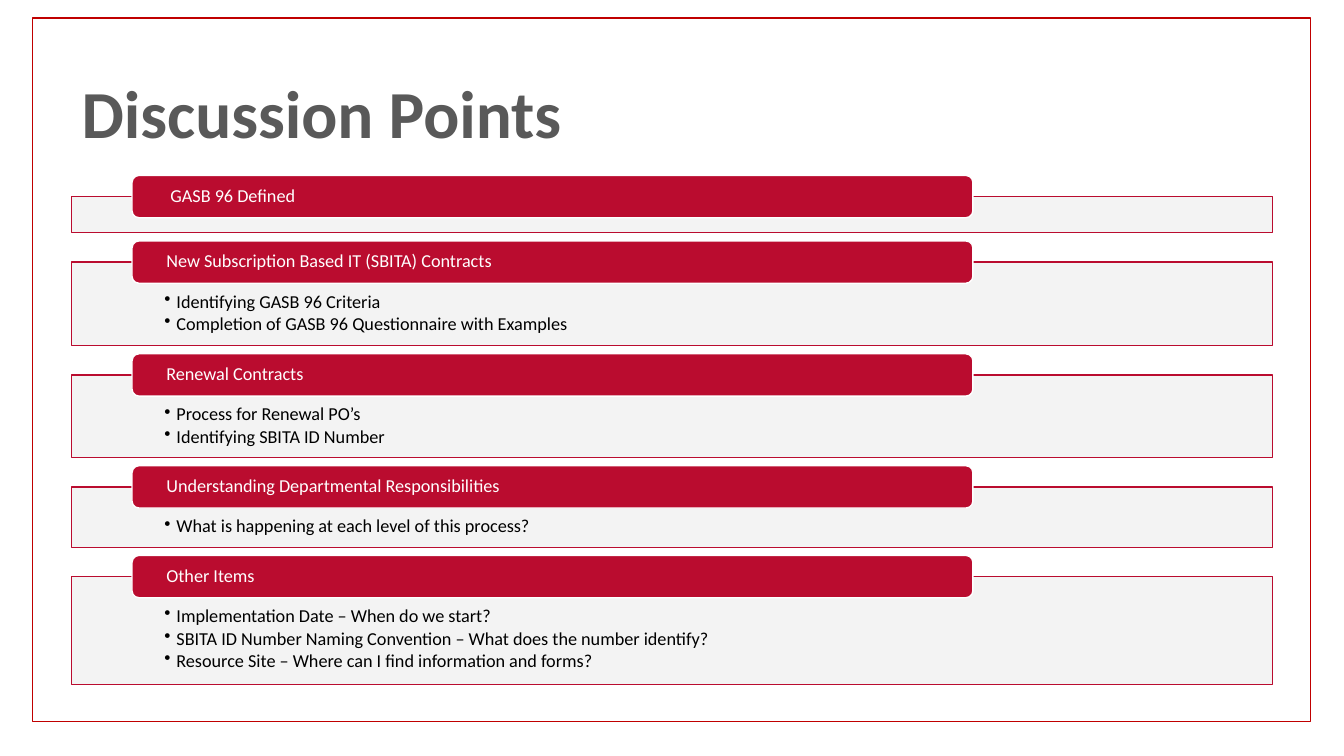
"""Build the Discussion Points slide: five headed panels inside a red frame."""
from lxml import etree
from pptx import Presentation, util as u
from pptx.dml.color import RGBColor
from pptx.enum import shapes, text
from pptx.oxml import ns

HUES = {"red": "BA0C2F", "frame": "C00000", "panel": "F2F2F2",
        "title": "595959", "white": "FFFFFF", "black": "000000"}
TOPICS = [
    (" GASB 96 Defined", 0.36, []),
    ("New Subscription Based IT (SBITA) Contracts", 0.83,
     ["Identifying GASB 96 Criteria",
      "Completion of GASB 96 Questionnaire with Examples"]),
    ("Renewal Contracts", 0.82,
     ["Process for Renewal PO’s", "Identifying SBITA ID Number"]),
    ("Understanding Departmental Responsibilities", 0.6,
     ["What is happening at each level of this process?"]),
    ("Other Items", 1.07,
     ["Implementation Date – When do we start?",
      "SBITA ID Number Naming Convention – What does the number identify?",
      "Resource Site – Where can I find information and forms?"]),
]
GAP = 0.29


def add_box(kind, box, fill, line):
    shape = slide.shapes.add_shape(kind, *map(u.Inches, box))
    shape.shadow.inherit = False
    if fill:
        shape.fill.solid()
        shape.fill.fore_color.rgb = RGBColor.from_string(HUES[fill])
    else:
        shape.fill.background()
    shape.line.color.rgb = RGBColor.from_string(HUES[line])
    shape.line.width = u.Pt(1)
    return shape


def set_text(shape, lines, size, hue, pads, anchor):
    frame = shape.text_frame
    frame.text = "\n".join(lines)
    frame.word_wrap = True
    frame.auto_size = text.MSO_AUTO_SIZE.NONE
    frame.vertical_anchor = anchor
    (frame.margin_left, frame.margin_top,
     frame.margin_right, frame.margin_bottom) = map(u.Inches, pads)
    for para in frame.paragraphs:
        para.alignment = text.PP_ALIGN.LEFT
        para.line_spacing = 0.9
        para.font.size = u.Pt(size)
        para.font.name = "Calibri"
        para.font.color.rgb = RGBColor.from_string(HUES[hue])
    return frame.paragraphs


deck = Presentation()
deck.slide_width, deck.slide_height = u.Inches(13.33), u.Inches(7.5)
slide = deck.slides.add_slide(deck.slide_layouts[5])

title = slide.shapes.title
title.left, title.top = u.Inches(0.71), u.Inches(0.93)
title.width, title.height = u.Inches(10.87), u.Inches(0.64)
head = set_text(title, ["Discussion Points"], 48, "title",
                (0.1, 0.05, 0.1, 0.05), text.MSO_ANCHOR.BOTTOM)
head[0].font.bold = True

rect = shapes.MSO_SHAPE.RECTANGLE
add_box(rect, (0.32, 0.18, 12.68, 6.98), None, "frame")

top = 1.95
for topic, height, points in TOPICS:
    panel = add_box(rect, (0.71, top, 11.91, height), "panel", "red")
    color = panel._element.spPr.find(".//" + ns.qn("a:srgbClr"))
    etree.SubElement(color, ns.qn("a:alpha"), val="90000")
    if points:
        for para in set_text(panel, points, 13, "black",
                             (0.92, 0.3, 0.92, 0.1), text.MSO_ANCHOR.TOP):
            para.level = 1
            para.space_after = u.Pt(2)
            props = para._p.get_or_add_pPr()
            props.set("marL", str(u.Inches(0.12)))
            props.set("indent", str(-u.Inches(0.12)))
            bullet = etree.Element(ns.qn("a:buChar"), char="•")
            props.find(ns.qn("a:defRPr")).addprevious(bullet)

    tab = add_box(shapes.MSO_SHAPE.ROUNDED_RECTANGLE,
                  (1.31, top - 0.21, 8.34, 0.42), "red", "white")
    set_text(tab, [topic], 13, "white", (0.32, 0, 0.32, 0),
             text.MSO_ANCHOR.MIDDLE)
    top += height + GAP

deck.save("out.pptx")
